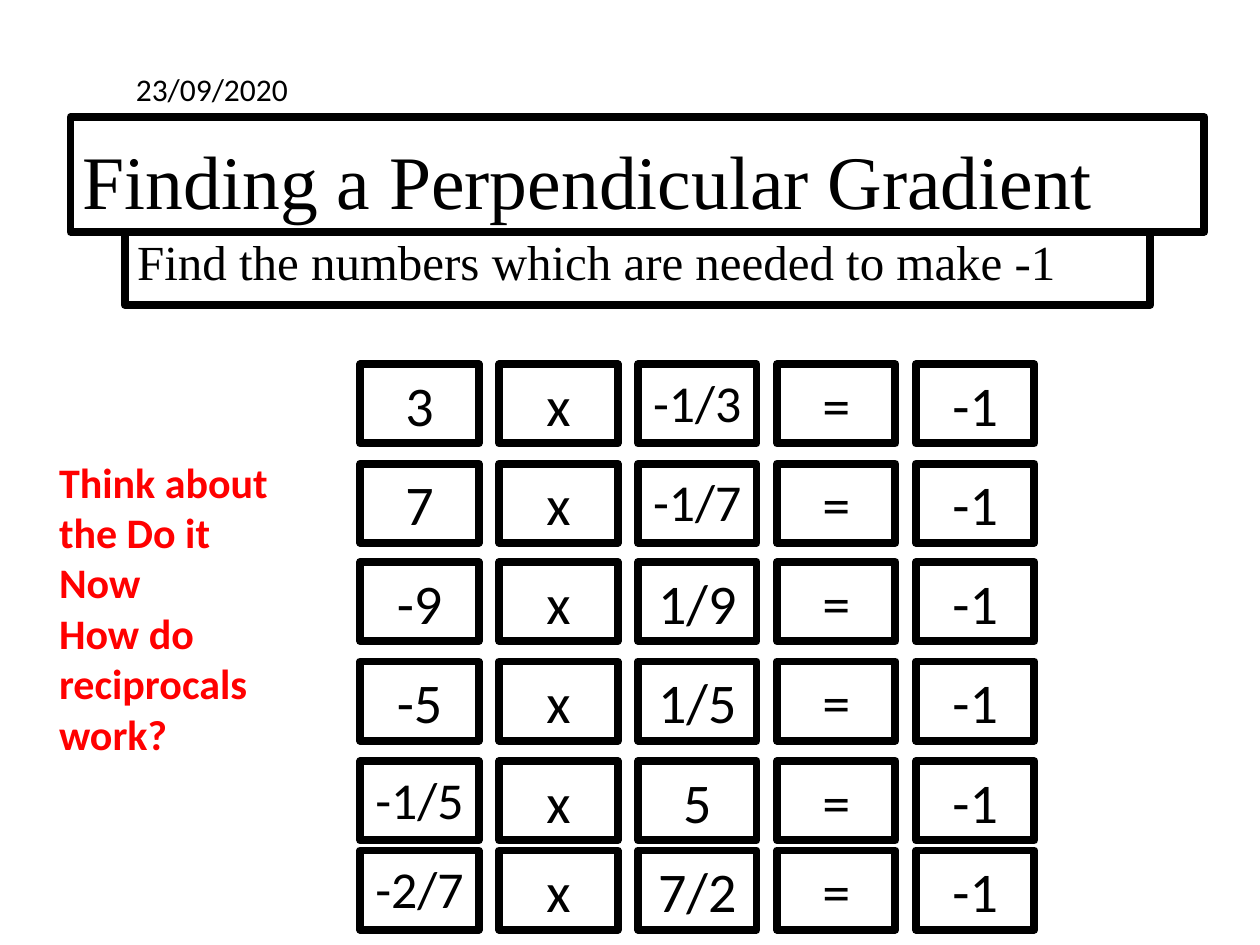
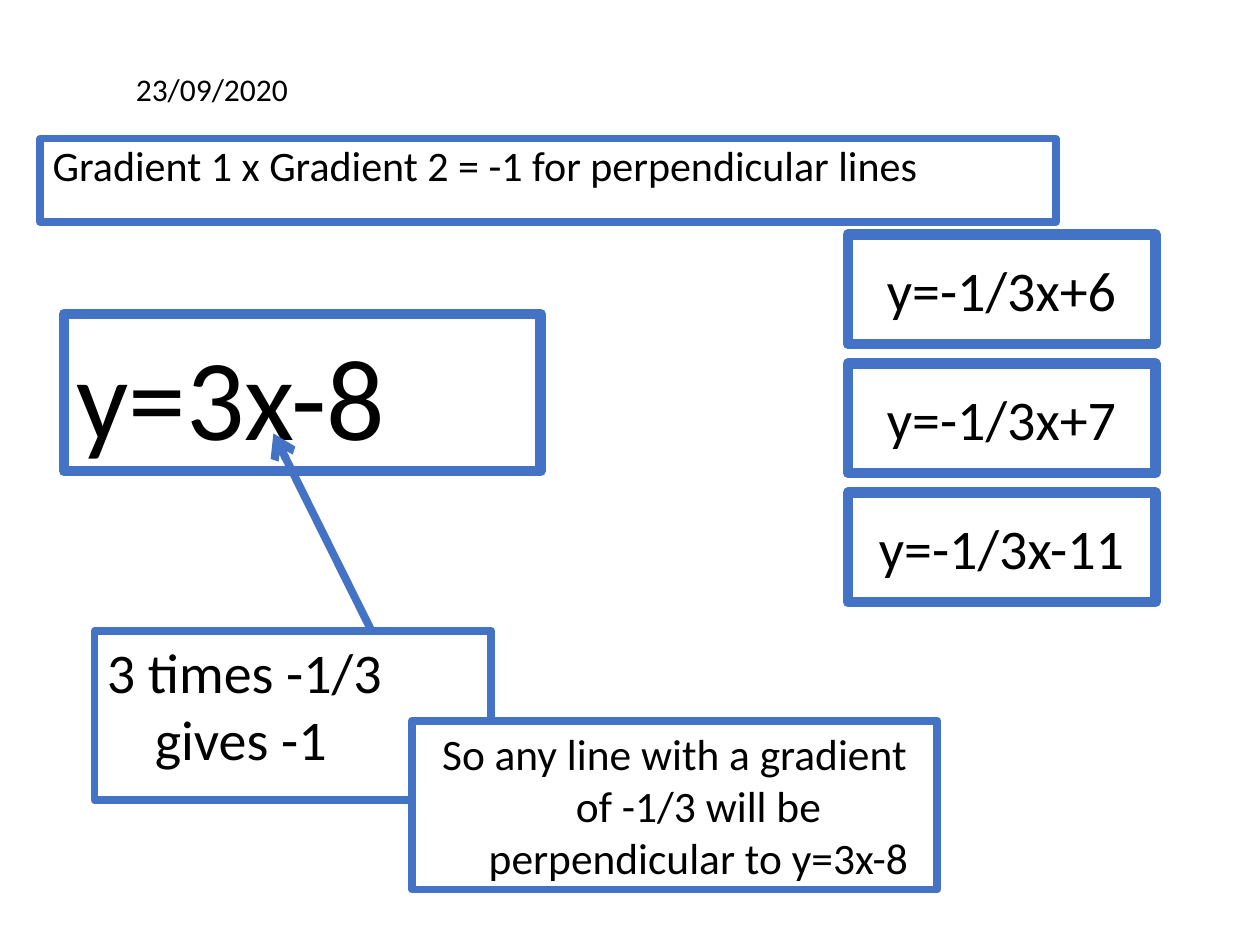
from lxml.etree import SubElement
from pptx import Presentation
from pptx.dml.color import RGBColor
from pptx.enum.shapes import MSO_CONNECTOR as Connector, MSO_SHAPE as Shape
from pptx.enum.text import MSO_ANCHOR as Anchor, PP_ALIGN as Align
from pptx.oxml.ns import qn
from pptx.util import Inches, Pt

BLACK, WHITE, RED, BLUE = "000000", "FFFFFF", "FF0000", "4472C4"
SANS, SERIF = "Calibri", "Times New Roman"
HANGING = 0.38

DATE = "23/09/2020"
TITLE = "Finding a Perpendicular Gradient"
TASK = "Find the numbers which are needed to make -1"
HINTS = ["Think about the Do it Now", "How do reciprocals work?"]
FACTORS = [
    ("3", "-1/3"),
    ("7", "-1/7"),
    ("-9", "1/9"),
    ("-5", "1/5"),
    ("-1/5", "5"),
    ("-2/7", "7/2"),
]
ROW_TOPS = [2.89, 3.68, 4.46, 5.25, 6.04, 6.75]
FIRST_COLUMN, COLUMN_STEP = 2.86, 1.1025

RULE = "Gradient 1 x Gradient 2 = -1 for perpendicular lines"
LINE_EQUATION = "y=3x-8"
PRODUCT = "3 times -1/3 gives -1"
CONCLUSION = "So any line with a gradient of -1/3 will be perpendicular to y=3x-8"
PERPENDICULARS = ["y=-1/3x+6", "y=-1/3x+7", "y=-1/3x-11"]
FIRST_ANSWER, ANSWER_STEP = 1.86, 1.025


def color(value):
    return RGBColor.from_string(value)


def write(shape, lines, size, font=SANS, ink=BLACK, bold=False, align=Align.LEFT,
          anchor=Anchor.TOP, spacing=None, hanging=False, wrap=True):
    frame = shape.text_frame
    frame.word_wrap = wrap
    frame.vertical_anchor = anchor
    for index, line in enumerate(lines):
        para = frame.add_paragraph() if index else frame.paragraphs[0]
        para.alignment = align
        if spacing:
            para.line_spacing = spacing
        if hanging:
            properties = para._p.get_or_add_pPr()
            properties.set("marL", str(Inches(HANGING)))
            properties.set("indent", str(-Inches(HANGING)))
        span = para.add_run()
        span.text = line
        span.font.name = font
        span.font.size = Pt(size)
        span.font.bold = bold
        span.font.color.rgb = color(ink)


def add_text(page, place, lines, size, **style):
    write(page.shapes.add_textbox(*map(Inches, place)), lines, size, **style)


def add_box(page, place, text, size, border, width=4.5, **style):
    box = page.shapes.add_shape(Shape.RECTANGLE, *map(Inches, place))
    box.shadow.inherit = False
    box.fill.solid()
    box.fill.fore_color.rgb = color(WHITE)
    box.line.color.rgb = color(border)
    box.line.width = Pt(width)
    write(box, [text], size, **style)


def add_arrow(page, start, end):
    arrow = page.shapes.add_connector(Connector.STRAIGHT, *map(Inches, start + end))
    arrow.line.color.rgb = color(BLUE)
    arrow.line.width = Pt(4.5)
    SubElement(arrow.line._get_or_add_ln(), qn("a:tailEnd"), type="arrow")
    SubElement(arrow._element.spPr, qn("a:effectLst"))


def add_page(deck):
    page = deck.slides.add_slide(deck.slide_layouts[6])
    add_text(page, (0.98, 0.51, 1.42, 0.4), [DATE], 18, wrap=False)
    return page


def add_number_page(deck):
    page = add_page(deck)
    add_box(page, (0.56, 0.93, 9, 0.91), TITLE, 43.2, BLACK,
            font=SERIF, anchor=Anchor.BOTTOM, spacing=0.9)
    add_box(page, (0.99, 1.84, 8.14, 0.58), TASK, 28, BLACK, font=SERIF, spacing=0.9)
    for top, (first, second) in zip(ROW_TOPS, FACTORS):
        for column, text in enumerate([first, "x", second, "=", "-1"]):
            left = FIRST_COLUMN + column * COLUMN_STEP
            size = 29.6 if len(text) > 3 else 32
            add_box(page, (left, top, 0.94, 0.63), text, size, BLACK,
                    align=Align.CENTER, hanging=True)
    add_text(page, (0.37, 3.57, 1.89, 2.52), HINTS, 24, ink=RED, bold=True)


def add_equation_page(deck):
    page = add_page(deck)
    add_box(page, (0.51, 2.49, 3.78, 1.25), LINE_EQUATION, 66, BLUE, 6,
            anchor=Anchor.BOTTOM, spacing=0.9)
    add_box(page, (0.32, 1.1, 8.06, 0.66), RULE, 24, BLUE, spacing=0.9)
    add_box(page, (0.75, 5.01, 3.15, 1.34), PRODUCT, 32, BLUE, hanging=True)
    add_box(page, (3.27, 5.72, 4.17, 1.34), CONCLUSION, 24.8, BLUE,
            align=Align.CENTER, hanging=True)
    add_arrow(page, (2.95, 5.01), (2.17, 3.44))
    for row, equation in enumerate(PERPENDICULARS):
        top = FIRST_ANSWER + row * ANSWER_STEP
        add_box(page, (6.73, top, 2.44, 0.87), equation, 32, BLUE, 6,
                align=Align.CENTER, anchor=Anchor.MIDDLE)


def main():
    deck = Presentation()
    deck.slide_width, deck.slide_height = Inches(10), Inches(7.5)
    add_number_page(deck)
    add_equation_page(deck)
    deck.save("out.pptx")


if __name__ == "__main__":
    main()
